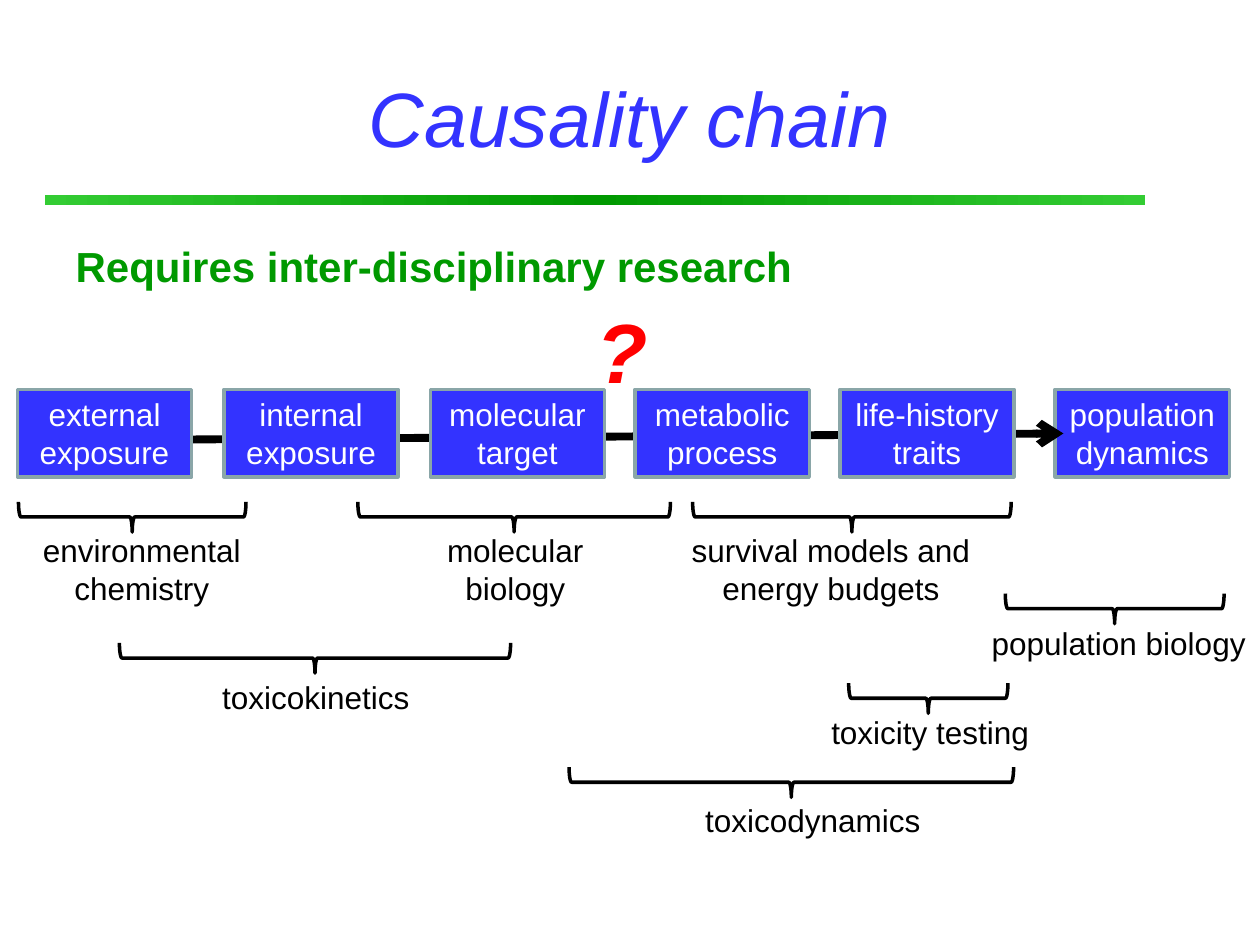
from lxml.etree import SubElement
from pptx import Presentation
from pptx.dml.color import RGBColor as RGB
from pptx.enum.shapes import MSO_CONNECTOR as CON, MSO_SHAPE as GEO
from pptx.enum.text import MSO_ANCHOR as ANC, MSO_AUTO_SIZE as FIT, PP_ALIGN as AL
from pptx.oxml.ns import qn
from pptx.util import Pt

HUES = {"blue": "3333FF", "edge": "8AA6A8", "green": "009900", "lime": "33CC33",
        "red": "FF0000", "black": "000000", "white": "FFFFFF"}


def hue(name):
    return RGB.from_string(HUES[name])


class Deck:
    font = "Arial"
    size = 18

    def __init__(self, wide, high):
        self.prs = Presentation()
        self.prs.slide_width, self.prs.slide_height = Pt(wide), Pt(high)
        self.slide = self.prs.slides.add_slide(self.prs.slide_layouts[1])
        self.shapes = self.slide.shapes

    def text(self, frame, lines, color, size=None, align=AL.CENTER, bold=False, slant=False):
        for i, line in enumerate(lines):
            para = frame.add_paragraph() if i else frame.paragraphs[0]
            para.alignment = align
            run = para.add_run()
            run.text = line
            font = run.font
            font.name, font.size = self.font, Pt(size or self.size)
            font.bold, font.italic = bold, slant
            font.color.rgb = hue(color)

    def place(self, item, left, top, wide, high):
        item.left, item.top, item.width, item.height = map(Pt, (left, top, wide, high))

    def title(self, line, *area):
        item = self.shapes.title
        self.place(item, *area)
        item.text_frame.vertical_anchor = ANC.MIDDLE
        self.text(item.text_frame, [line], "blue", 44, slant=True)

    def body(self, line, *area):
        item = self.slide.placeholders[1]
        self.place(item, *area)
        self.text(item.text_frame, [line], "green", 24, AL.LEFT, bold=True)
        props = item.text_frame.paragraphs[0]._p.get_or_add_pPr()
        props.set("marL", str(Pt(27)))
        props.set("indent", str(Pt(-27)))
        SubElement(props, qn("a:buNone"))

    def shape(self, kind, *area):
        item = self.shapes.add_shape(kind, *map(Pt, area))
        item.shadow.inherit = False
        return item

    def bar(self, *area):
        item = self.shape(GEO.RECTANGLE, *area)
        item.line.fill.background()
        item.fill.gradient()
        item.fill.gradient_angle = 0
        stops = item._element.spPr.find(qn("a:gradFill")).find(qn("a:gsLst"))
        for old in list(stops):
            stops.remove(old)
        for pos, name in ((0, "lime"), (50, "green"), (100, "lime")):
            stop = SubElement(stops, qn("a:gs"), pos=str(pos * 1000))
            SubElement(stop, qn("a:srgbClr"), val=HUES[name])

    def box(self, line, *area):
        item = self.shape(GEO.RECTANGLE, *area)
        item.fill.solid()
        item.fill.fore_color.rgb = hue("blue")
        item.line.color.rgb = hue("edge")
        item.line.width = Pt(2)
        item.text_frame.vertical_anchor = ANC.MIDDLE
        self.text(item.text_frame, [line], "white")

    def arrow(self, *ends):
        item = self.shapes.add_connector(CON.STRAIGHT, *map(Pt, ends))
        item.line.color.rgb = hue("black")
        item.line.width = Pt(4.5)
        edge = item._element.spPr.find(qn("a:ln"))
        SubElement(edge, qn("a:tailEnd"), type="arrow")
        SubElement(item._element.spPr, qn("a:effectLst"))

    def brace(self, mid, level, span, deep=17.3):
        item = self.shape(GEO.LEFT_BRACE, mid - deep / 2, level - span / 2, deep, span)
        item.rotation = 270
        item.fill.background()
        item.line.color.rgb = hue("black")
        item.line.width = Pt(2)

    def label(self, lines, mid, top, wide, high, color="black", **style):
        item = self.shapes.add_textbox(*map(Pt, (mid - wide / 2, top, wide, high)))
        frame = item.text_frame
        frame.word_wrap = False
        frame.auto_size = FIT.SHAPE_TO_FIT_TEXT
        self.text(frame, lines, color, **style)


STEPS = [("external exposure", 10), ("internal exposure", 128), ("molecular target", 246),
         ("metabolic process", 363), ("life-history traits", 480), ("population dynamics", 603)]

FIELDS = [
    (["environmental", "chemistry"], (75.6, 295.4, 130), (81, 300, 129)),
    (["toxicokinetics"], (180, 376, 223.5), (180.5, 383.7, 122)),
    (["molecular", "biology"], (293.8, 295.4, 178.6), (294.5, 300, 94)),
    (["survival models and", "energy budgets"], (486.8, 295.4, 182), (474.8, 300, 175)),
    (["population biology"], (637, 347.8, 125), (639.2, 352.8, 161)),
    (["toxicodynamics"], (452.2, 447, 254), (464.5, 454.3, 139)),
    (["toxicity testing"], (530.5, 399, 91), (531.5, 404, 129)),
]


def main():
    deck = Deck(720, 540)
    deck.bar(25.5, 111.5, 629, 5.5)
    deck.title("Causality chain", 36, 21.6, 648, 90)
    deck.body("Requires inter-disciplinary research", 36, 134, 648, 69)
    *early, last = STEPS
    deck.box(last[0], last[1], 222.5, 99.5, 50)
    deck.arrow(85.7, 251.3, 607.7, 247.7)
    for line, left in early:
        deck.box(line, left, 222.5, 99.5, 50)
    for lines, brace, label in FIELDS:
        deck.brace(*brace)
        deck.label(lines, *label, 51 if len(lines) > 1 else 29)
    deck.label(["?"], 356, 167.8, 44, 65.5, "red", size=48, align=AL.LEFT, bold=True, slant=True)
    deck.prs.save("out.pptx")


if __name__ == "__main__":
    main()
